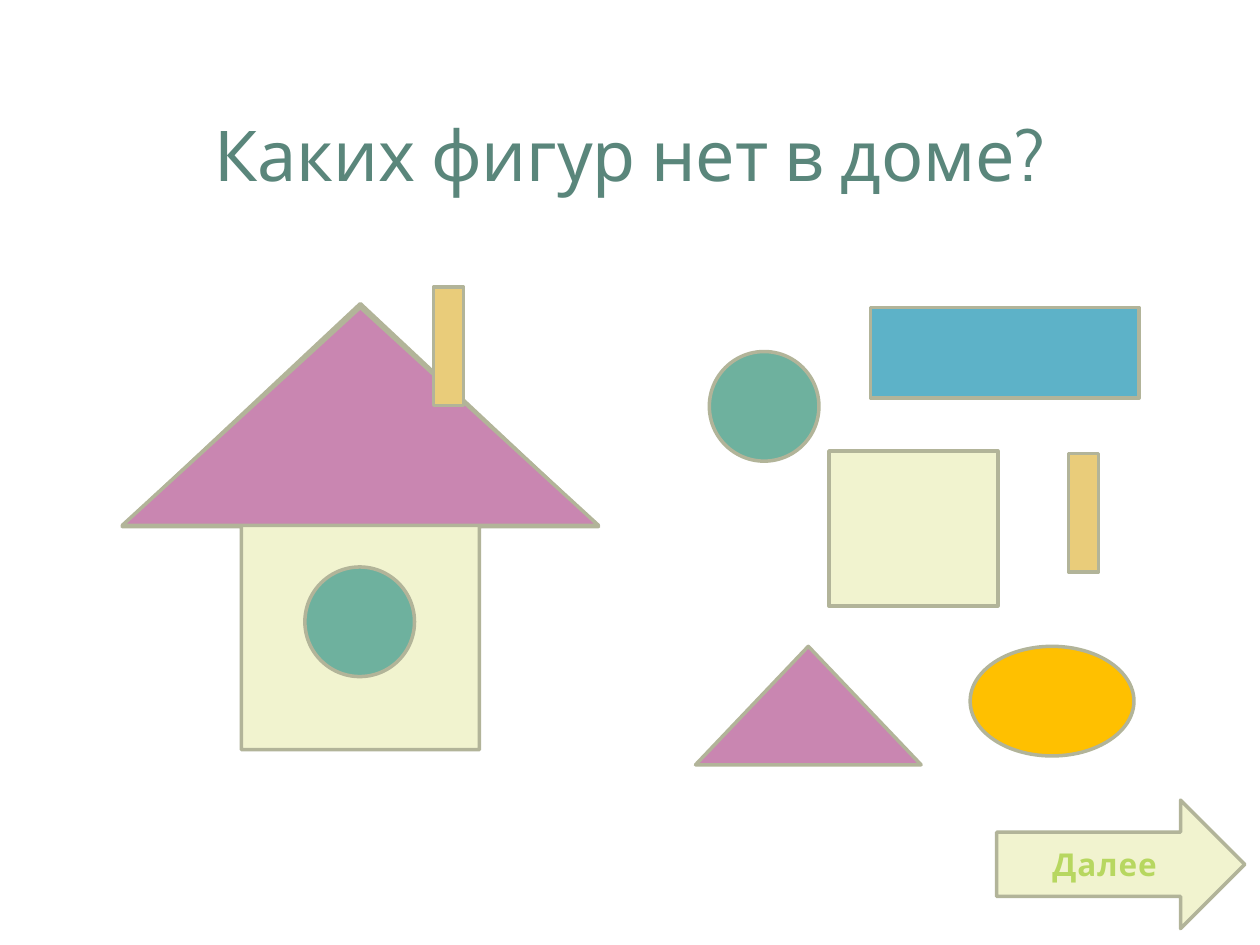
import pptx
import pptx.util
import pptx.dml.color
import pptx.enum.shapes
import pptx.enum.text

Inches = pptx.util.Inches
Pt = pptx.util.Pt
KIND = pptx.enum.shapes.MSO_SHAPE

CREAM, PINK, SAND = "F1F3CF", "C986B1", "E9CC7A"
GREEN, GOLD, BLUE = "6EB19E", "FFC000", "5DB2C8"
EDGE = "B2B499"


def color(code):
    return pptx.dml.color.RGBColor.from_string(code)


def write(shape, text, size, code):
    """Put one centred line of text in the middle of a shape."""
    frame = shape.text_frame
    frame.text = text
    frame.word_wrap = True
    frame.vertical_anchor = pptx.enum.text.MSO_ANCHOR.MIDDLE
    line = frame.paragraphs[0]
    line.alignment = pptx.enum.text.PP_ALIGN.CENTER
    run = line.runs[0]
    run.font.name = "Cabin"
    run.font.size = Pt(size)
    run.font.color.rgb = color(code)
    return run


deck = pptx.Presentation()
deck.slide_width = Inches(10)
deck.slide_height = Inches(7.5)
slide = deck.slides.add_slide(deck.slide_layouts[6])

title = slide.shapes.add_textbox(Inches(0.5), Inches(0.59), Inches(9), Inches(1.25))
write(title, "Каких фигур нет в доме?", 40, "5A867B")

# kind, fill, left, top, width, height
parts = [
    (KIND.UP_ARROW, CREAM, 0.97, 2.41, 3.78, 3.54),  # house wall
    (KIND.ISOSCELES_TRIANGLE, PINK, 0.97, 2.44, 3.78, 1.73),  # house roof
    (KIND.RECTANGLE, CREAM, 6.58, 3.58, 1.34, 1.23),
    (KIND.ISOSCELES_TRIANGLE, PINK, 5.52, 5.13, 1.79, 0.94),
    (KIND.RECTANGLE, SAND, 3.44, 2.28, 0.24, 0.94),  # house chimney
    (KIND.RECTANGLE, SAND, 8.48, 3.6, 0.24, 0.94),
    (KIND.OVAL, GREEN, 2.42, 4.5, 0.87, 0.87),  # house window
    (KIND.OVAL, GREEN, 5.63, 2.79, 0.87, 0.87),
    (KIND.OVAL, GOLD, 7.7, 5.13, 1.3, 0.87),
    (KIND.RECTANGLE, BLUE, 6.91, 2.44, 2.13, 0.72),
    (KIND.RIGHT_ARROW, CREAM, 7.91, 6.35, 1.97, 1.02),  # next arrow
]
for kind, fill, *box in parts:
    shape = slide.shapes.add_shape(kind, *map(Inches, box))
    shape.shadow.inherit = False
    shape.fill.solid()
    shape.fill.fore_color.rgb = color(fill)
    shape.line.color.rgb = color(EDGE)
    shape.line.width = Pt(2)

# The arrow is the last shape drawn
label = write(shape, "Далее", 18, "B7D760")
label.font.bold = True
label.font._element.set("spc", "50")

deck.save("out.pptx")
